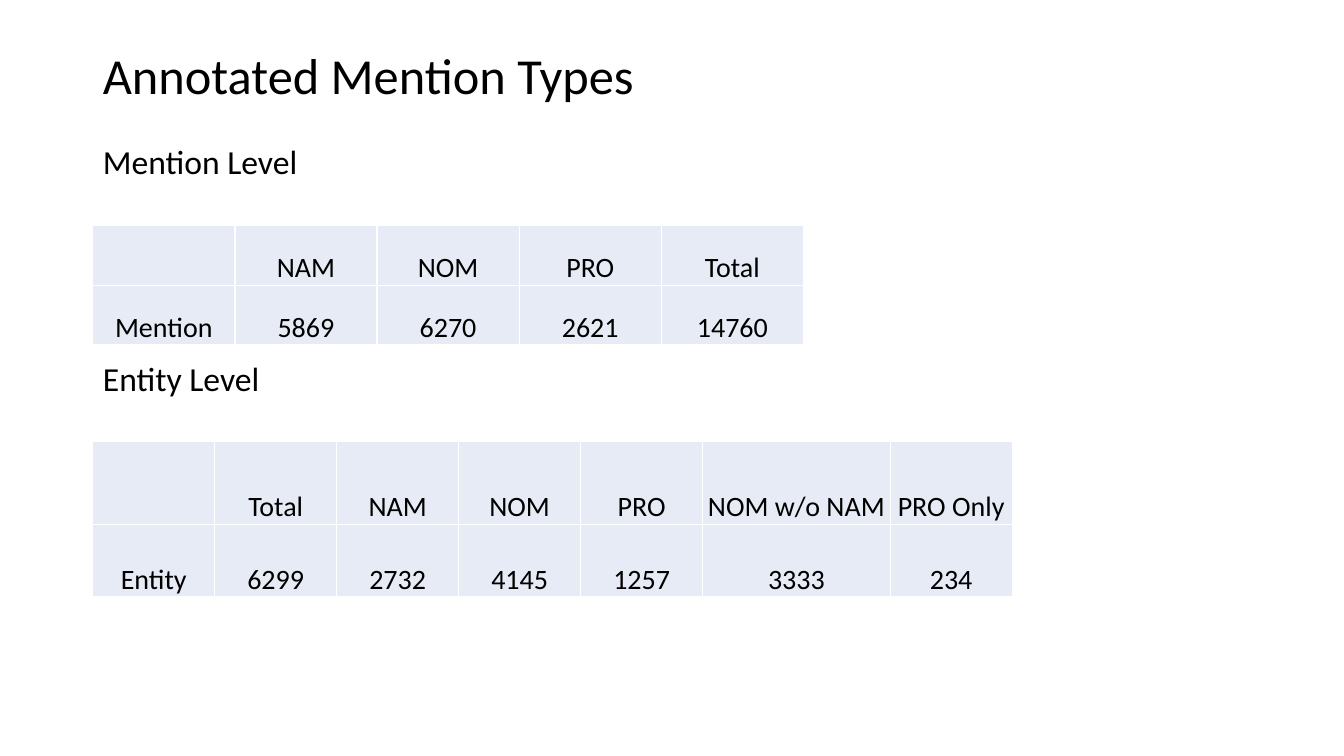
import pptx
import pptx.dml.color
import pptx.enum.text
import pptx.oxml
import pptx.oxml.ns
import pptx.util

ALIGN = pptx.enum.text.PP_ALIGN
ANCHOR = pptx.enum.text.MSO_ANCHOR
Inches = pptx.util.Inches


def colour(value):
    return pptx.dml.color.RGBColor.from_string(value)


def write(para, text, size=20, align=ALIGN.LEFT, before=0, spacing=1.0, ink="000000"):
    para.alignment = align
    para.space_before = pptx.util.Pt(before)
    para.line_spacing = spacing
    span = para.add_run()
    span.text = text
    span.font.name = "Calibri"
    span.font.size = pptx.util.Pt(size)
    span.font.color.rgb = colour(ink)


deck = pptx.Presentation()
deck.slide_width = Inches(13.33)
deck.slide_height = Inches(7.5)
page = deck.slides.add_slide(deck.slide_layouts[1])
left = Inches(0.92)
width = deck.slide_width - 2 * left

title, body = page.placeholders
for box, top, height, anchor in [
    (title, 0.4, 0.75, ANCHOR.MIDDLE),
    (body, 1.35, 5.41, ANCHOR.TOP),
]:
    box.left, box.top, box.width, box.height = left, Inches(top), width, Inches(height)
    box.text_frame.auto_size = pptx.enum.text.MSO_AUTO_SIZE.NONE
    box.text_frame.vertical_anchor = anchor

write(title.text_frame.paragraphs[0], "Annotated Mention Types", size=36, spacing=0.9)

headings = [
    (body.text_frame.paragraphs[0], "Mention Level", 0),
    (body.text_frame.add_paragraph(), "Entity Level", 126),
]
for para, heading, before in headings:
    properties = para._p.get_or_add_pPr()
    properties.set("marL", "0")
    properties.set("indent", "0")
    properties.append(pptx.oxml.parse_xml(f'<a:buNone {pptx.oxml.ns.nsdecls("a")}/>'))
    write(para, heading, size=24, before=before)

tables = [
    (2.24, [1.41] * 5, [0.59, 0.59], [
        ["", "NAM", "NOM", "PRO", "Total"],
        ["Mention", "5869", "6270", "2621", "14760"],
    ]),
    (4.38, [1.21] * 5 + [1.86, 1.21], [0.82, 0.72], [
        ["", "Total", "NAM", "NOM", "PRO", "NOM w/o NAM", "PRO Only"],
        ["Entity", "6299", "2732", "4145", "1257", "3333", "234"],
    ]),
]
for top, widths, heights, rows in tables:
    frame = page.shapes.add_table(
        len(rows), len(widths), left, Inches(top), Inches(sum(widths)), Inches(sum(heights))
    )
    table = frame.table
    table.first_row = False
    table.horz_banding = False
    for column, column_width in zip(table.columns, widths):
        column.width = Inches(column_width)
    for row, row_height, values in zip(table.rows, heights, rows):
        row.height = Inches(row_height)
        for cell, value in zip(row.cells, values):
            cell.vertical_anchor = ANCHOR.BOTTOM
            cell.margin_left = cell.margin_right = cell.margin_top = Inches(0.01)
            cell.margin_bottom = 0
            for side in ("lnL", "lnR", "lnT", "lnB"):
                cell._tc.get_or_add_tcPr().append(pptx.oxml.parse_xml(
                    f'<a:{side} {pptx.oxml.ns.nsdecls("a")} w="12700"><a:solidFill>'
                    f'<a:srgbClr val="FFFFFF"/></a:solidFill></a:{side}>'
                ))
            cell.fill.solid()
            cell.fill.fore_color.rgb = colour("E7EBF5")
            if value:
                write(cell.text_frame.paragraphs[0], value, align=ALIGN.CENTER)

deck.save("out.pptx")
